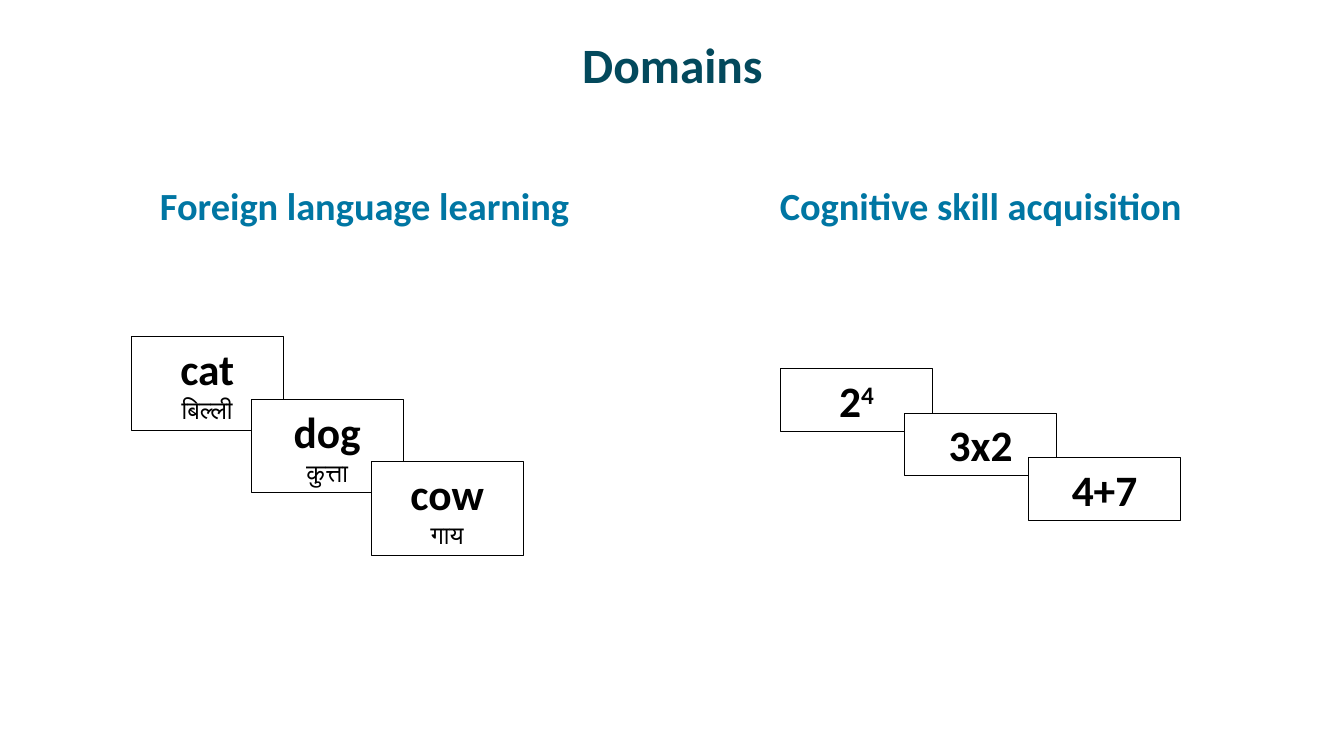
from pptx import Presentation
from pptx.dml.color import RGBColor
from pptx.enum.shapes import MSO_SHAPE
from pptx.enum.text import MSO_ANCHOR, MSO_AUTO_SIZE, PP_ALIGN
from pptx.util import Inches, Pt

RECT = MSO_SHAPE.RECTANGLE
TOP, MIDDLE = MSO_ANCHOR.TOP, MSO_ANCHOR.MIDDLE
CENTER = PP_ALIGN.CENTER
GROW = MSO_AUTO_SIZE.SHAPE_TO_FIT_TEXT
FONT = "Calibri"
BLACK, WHITE, TEAL, BLUE = "000000", "FFFFFF", "03495C", "0076A3"


def color(code):
    return RGBColor.from_string(code)


def style(run, size, code, bold=True):
    run.font.name = FONT
    run.font.size = Pt(size)
    run.font.bold = bold
    run.font.color.rgb = color(code)


def add_label(slide, text, left, top, width, height, size, code, anchor):
    box = slide.shapes.add_textbox(Inches(left), Inches(top), Inches(width), Inches(height))
    frame = box.text_frame
    frame.word_wrap = True
    frame.vertical_anchor = anchor
    frame.margin_left = frame.margin_right = Inches(0.11)
    frame.margin_top = frame.margin_bottom = Inches(0.06)
    frame.text = text
    line = frame.paragraphs[0]
    line.alignment = CENTER
    style(line.runs[0], size, code)


def add_card(slide, left, top, height, word, below, power, filled):
    card = slide.shapes.add_shape(RECT, Inches(left), Inches(top), Inches(1.51), Inches(height))
    card.shadow.inherit = False
    if filled:
        card.fill.solid()
        card.fill.fore_color.rgb = color(WHITE)
    else:
        card.fill.background()
    card.line.color.rgb = color(BLACK)
    card.line.width = Pt(0.75)
    frame = card.text_frame
    frame.word_wrap = True
    frame.auto_size = GROW
    frame.text = word
    first = frame.paragraphs[0]
    first.alignment = CENTER
    style(first.runs[0], 31, BLACK)
    if power:
        run = first.add_run()
        run.text = power
        style(run, 31, BLACK)
        run.font._element.set("baseline", "30000")
    if below:
        second = frame.add_paragraph()
        second.text = below
        second.alignment = CENTER
        style(second.runs[0], 18, BLACK, False)


def add_stack(slide, left, top, right, down, height, cards):
    for index, (word, below, power) in enumerate(cards):
        add_card(slide, left + index * right, top + index * down, height,
                 word, below, power, index > 0)


def main():
    deck = Presentation()
    deck.slide_width, deck.slide_height = Inches(13.33), Inches(7.5)
    slide = deck.slides.add_slide(deck.slide_layouts[6])
    add_label(slide, "Domains", 0.67, 0.17, 12, 0.92, 35.3, TEAL, MIDDLE)
    heads = [(0.67, "Foreign language learning"), (6.78, "Cognitive skill acquisition")]
    for left, text in heads:
        add_label(slide, text, left, 1.75, 5.89, 4.95, 27.4, BLUE, TOP)
    words = [("cat", "बिल्ली", ""), ("dog", "कुत्ता", ""), ("cow", "गाय", "")]
    sums = [("2", "", "4"), ("3x2", "", ""), ("4+7", "", "")]
    add_stack(slide, 1.3, 3.34, 1.19, 0.62, 0.93, words)
    add_stack(slide, 7.74, 3.66, 1.23, 0.44, 0.62, sums)
    deck.save("out.pptx")


if __name__ == "__main__":
    main()
